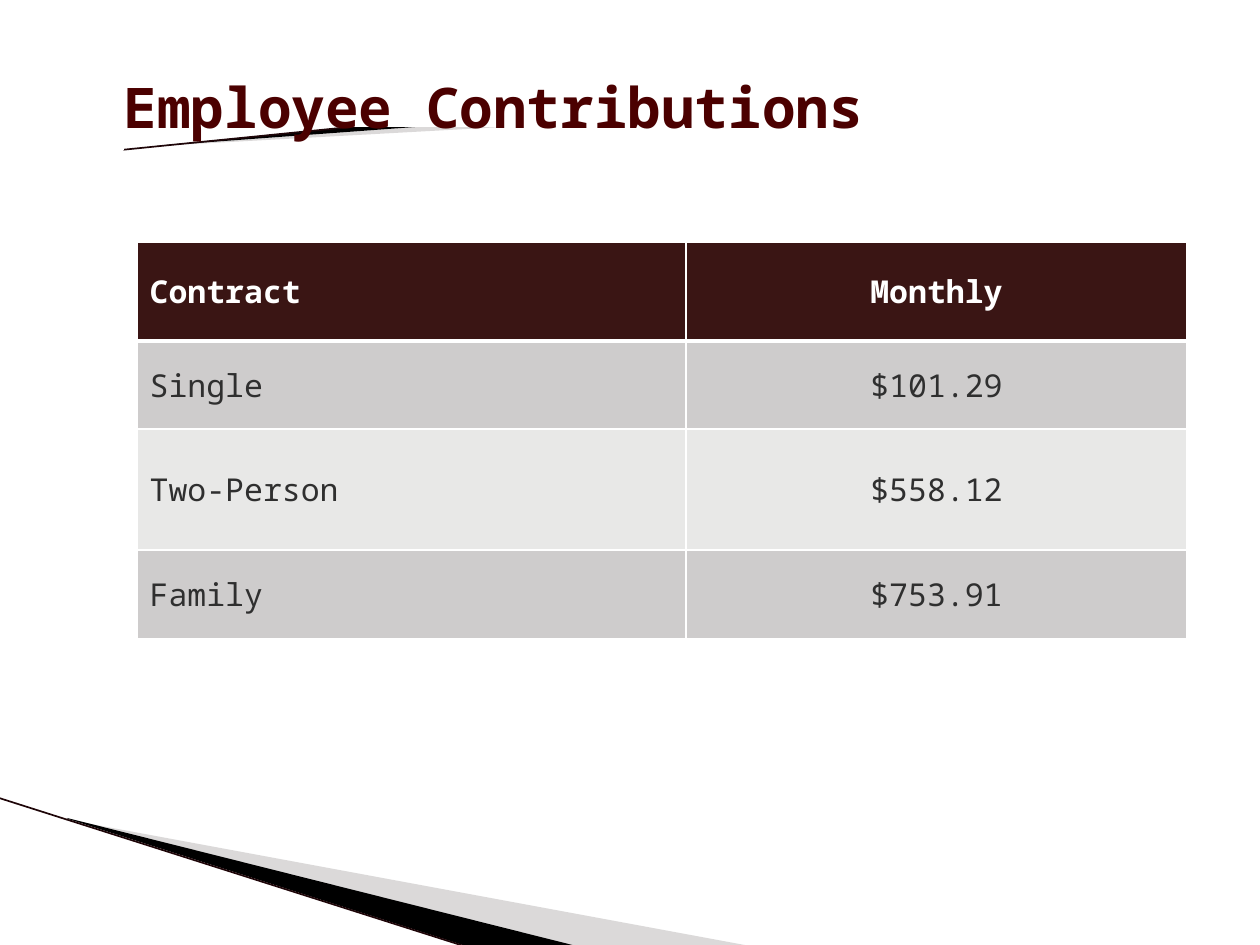
from dataclasses import dataclass
from lxml.etree import SubElement as Sub
from pptx import Presentation
from pptx.dml.color import RGBColor as Rgb
from pptx.enum.shapes import MSO_CONNECTOR as Link, MSO_SHAPE as Kind
from pptx.enum.text import MSO_ANCHOR as Anchor, MSO_AUTO_SIZE as Fit, PP_ALIGN as Align
from pptx.oxml.ns import qn
from pptx.util import Emu, Pt


@dataclass(frozen=True)
class Theme:
    font: str = "Noto Sans Mono"
    title: str = "4B0000"
    head: str = "3A1514"
    bands: tuple = ("CECCCC", "E8E8E7")
    text: str = "2F2F2F"
    white: str = "FFFFFF"
    black: str = "000000"
    gray: str = "A6A2A2"
    edge: str = "1E0508"
    big: int = 32
    body: int = 18


THEME = Theme()
ROWS = [
    ("Contract", "Monthly"),
    ("Single", "$101.29"),
    ("Two-Person", "$558.12"),
    ("Family", "$753.91"),
]
WIDTHS = (549, 501)
HEIGHTS = (99, 88, 121, 89)


def px(count):
    return Emu(round(count * 914400 / 126))


def paint(fill, color, alpha=None):
    fill.solid()
    fill.fore_color.rgb = Rgb.from_string(color)
    if alpha:
        tint = fill._xPr.find(qn("a:solidFill"))[0]
        Sub(tint, qn("a:alpha"), val=str(alpha * 1000))


def style(para, size, color, bold, align=Align.LEFT):
    para.alignment = align
    for run in para.runs:
        font = run.font
        font.name, font.size, font.bold = THEME.font, Pt(size), bold
        font.color.rgb = Rgb.from_string(color)


def add_wedge(slide, points, color, alpha=None):
    first, *rest = [(px(x), px(y)) for x, y in points]
    pen = slide.shapes.build_freeform(*first, scale=1.0)
    pen.add_line_segments(rest, close=True)
    shape = pen.convert_to_shape()
    shape.shadow.inherit = False
    shape.line.fill.background()
    paint(shape.fill, color, alpha)


def add_line(slide, *ends):
    line = slide.shapes.add_connector(Link.STRAIGHT, *map(px, ends))
    line.line.color.rgb = Rgb.from_string(THEME.edge)
    line.line.width = Pt(0.95)
    Sub(line._element.spPr, qn("a:effectLst"))


def add_mask(slide, kind, *box):
    shape = slide.shapes.add_shape(kind, *map(px, box))
    shape.shadow.inherit = False
    shape.line.fill.background()
    paint(shape.fill, THEME.white)


def add_swoosh(slide, gray, black, line):
    add_wedge(slide, gray, THEME.gray, 40)
    add_wedge(slide, black, THEME.black)
    add_line(slide, *line)


def set_title(slide, text):
    title = slide.shapes.title
    title.left, title.top, title.width, title.height = map(px, (111, 67, 827, 79))
    frame = title.text_frame
    frame.text = text
    frame.auto_size = Fit.NONE
    frame.vertical_anchor = Anchor.MIDDLE
    style(frame.paragraphs[0], THEME.big, THEME.title, True)
    slide.shapes._spTree.append(title._element)


def add_edge(cell, side, width):
    props = cell._tc.get_or_add_tcPr()
    edge = Sub(props, qn(f"a:ln{side}"), w=str(Pt(width)))
    Sub(Sub(edge, qn("a:solidFill")), qn("a:srgbClr"), val=THEME.white)


def set_cell(cell, text, row, col):
    head = row == 0
    thick = {(0, "B"), (1, "T")}
    for side in "LRTB":
        add_edge(cell, side, 3 if (row, side) in thick else 1)
    paint(cell.fill, THEME.head if head else THEME.bands[(row - 1) % 2])
    cell.vertical_anchor = Anchor.MIDDLE
    cell.text_frame.text = text
    style(cell.text_frame.paragraphs[0], THEME.body,
          THEME.white if head else THEME.text, head,
          Align.CENTER if col else Align.LEFT)


def add_rates(slide):
    box = (137, 242, sum(WIDTHS), sum(HEIGHTS))
    table = slide.shapes.add_table(len(ROWS), len(WIDTHS), *map(px, box)).table
    for col, width in zip(table.columns, WIDTHS):
        col.width = px(width)
    for row, height in zip(table.rows, HEIGHTS):
        row.height = px(height)
    for r, texts in enumerate(ROWS):
        for c, text in enumerate(texts):
            set_cell(table.cell(r, c), text, r, c)


def main():
    deck = Presentation()
    deck.slide_width, deck.slide_height = px(1260), px(945)
    slide = deck.slides.add_slide(deck.slide_layouts[5])
    add_swoosh(slide,
               [(69, 820), (750, 946), (575, 946), (69, 819)],
               [(67, 818), (576, 946), (469, 947), (68, 819)],
               (-1, 798, 467, 947))
    add_swoosh(slide,
               [(157, 146), (503, 127), (415, 127)],
               [(156, 146), (415, 127), (360, 126)],
               (121, 150, 360, 126))
    add_mask(slide, Kind.RECTANGLE, 121, 122, 388, 5)
    add_mask(slide, Kind.ROUNDED_RECTANGLE, 115, 123, 9, 28)
    set_title(slide, "Employee Contributions")
    add_rates(slide)
    deck.save("out.pptx")


if __name__ == "__main__":
    main()
